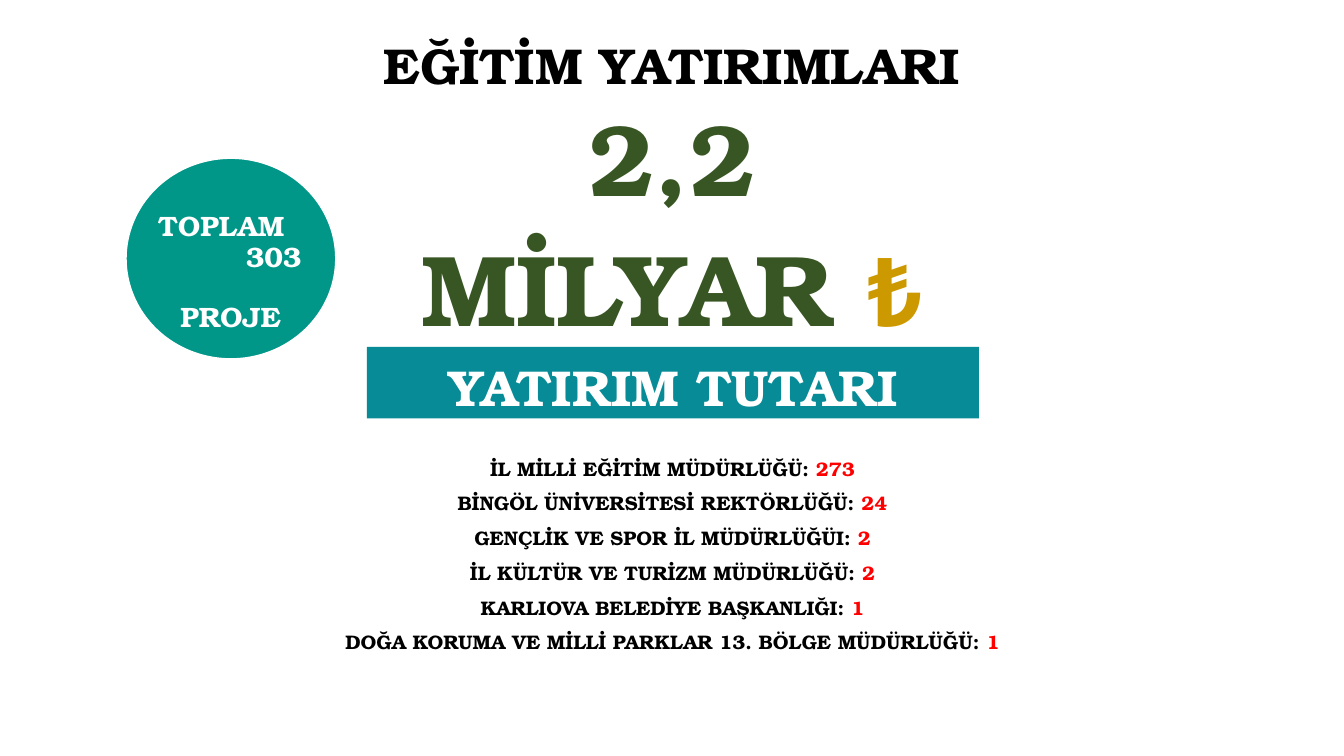
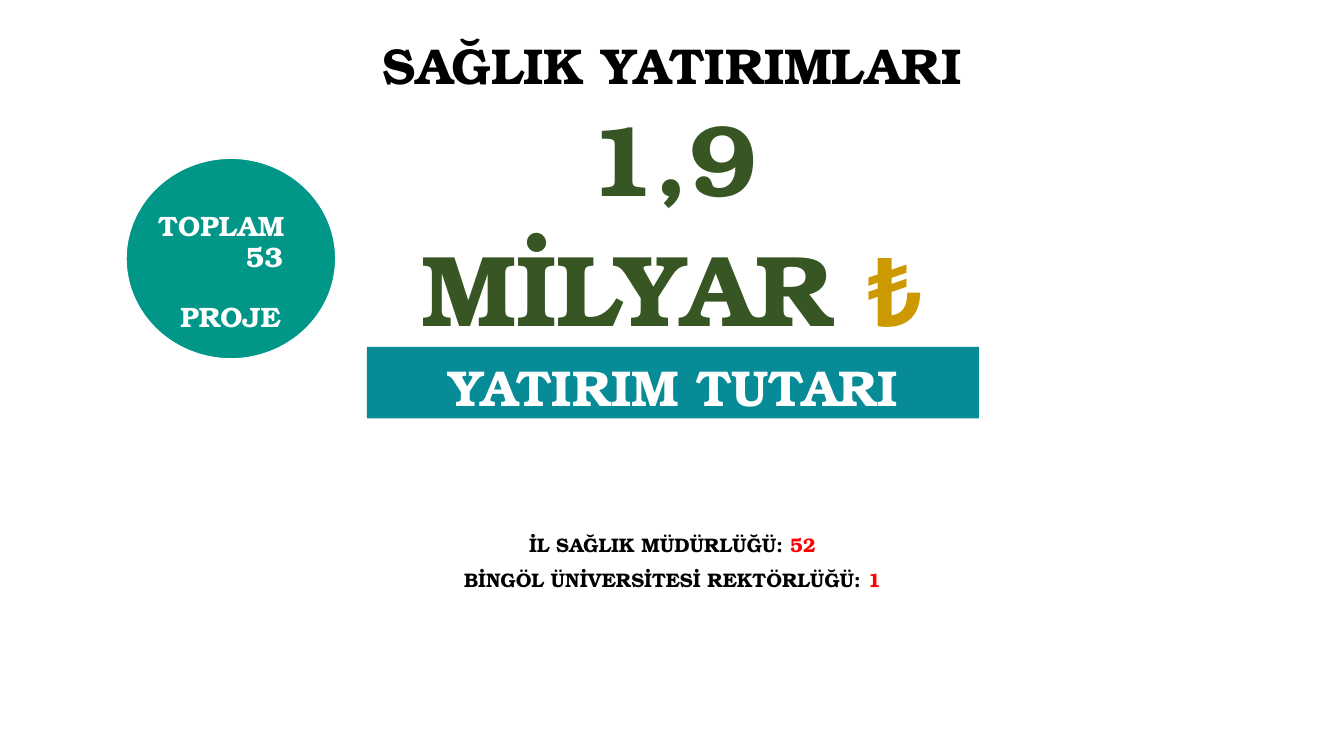
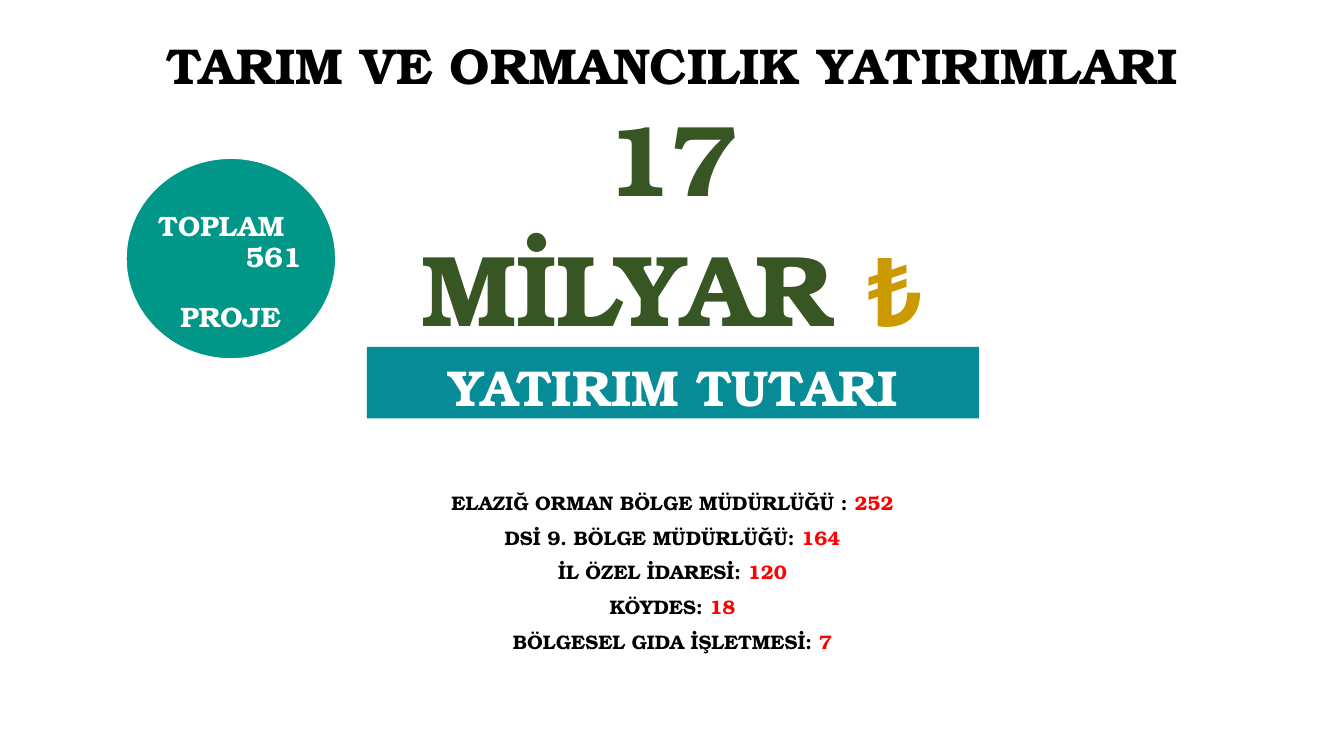
"""Builds three slides of investment totals by sector."""
from pptx import Presentation
from pptx.dml.color import RGBColor
from pptx.enum.shapes import MSO_SHAPE as SHAPE
from pptx.enum.text import MSO_ANCHOR as ANCHOR, MSO_AUTO_SIZE as AUTOSIZE, PP_ALIGN as ALIGN
from pptx.util import Pt
from lxml.etree import SubElement
from pptx.oxml.ns import qn

PX = 9144
FONT = "TeX Gyre Bonum"
COLORS = {
    "text": "000000",
    "white": "FFFFFF",
    "circle": "009688",
    "band": "068B97",
    "amount": "385623",
    "lira": "CC9900",
    "count": "FF0000",
}
SECTORS = [
    ("EĞİTİM YATIRIMLARI", "2,2", "303", 448, [
        ("İL MİLLİ EĞİTİM MÜDÜRLÜĞÜ: ", "273"),
        ("BİNGÖL ÜNİVERSİTESİ REKTÖRLÜĞÜ: ", "24"),
        ("GENÇLİK VE SPOR İL MÜDÜRLÜĞÜI: ", "2"),
        ("İL KÜLTÜR VE TURİZM MÜDÜRLÜĞÜ: ", "2"),
        ("KARLIOVA BELEDİYE BAŞKANLIĞI: ", "1"),
        ("DOĞA KORUMA VE MİLLİ PARKLAR 13. BÖLGE MÜDÜRLÜĞÜ: ", "1"),
    ]),
    ("SAĞLIK YATIRIMLARI", "1,9", "53", 524, [
        ("İL SAĞLIK MÜDÜRLÜĞÜ: ", "52"),
        ("BİNGÖL ÜNİVERSİTESİ REKTÖRLÜĞÜ: ", "1"),
    ]),
    ("TARIM VE ORMANCILIK YATIRIMLARI", "17", "561", 482, [
        ("ELAZIĞ ORMAN BÖLGE MÜDÜRLÜĞÜ : ", "252"),
        ("DSİ 9. BÖLGE MÜDÜRLÜĞÜ: ", "164"),
        ("İL ÖZEL İDARESİ: ", "120"),
        ("KÖYDES: ", "18"),
        ("BÖLGESEL GIDA İŞLETMESİ: ", "7"),
    ]),
]


def rgb(name):
    """Return a named colour."""
    return RGBColor.from_string(COLORS[name])


def px(*lengths):
    """Turn px into EMU."""
    return [n * PX for n in lengths]


def place(sp, *box):
    """Move and size a shape to left, top, width, height."""
    sp.left, sp.top, sp.width, sp.height = px(*box)


def add_run(p, text, size, color, font=FONT):
    """Append a bold run."""
    r = p.add_run()
    r.text = text
    r.font.name, r.font.size, r.font.bold = font, Pt(size), True
    r.font.color.rgb = rgb(color)


def write(sp, lines, spacing=1.07, after=0, align=ALIGN.CENTER):
    """Fill a shape with one paragraph per list of runs."""
    tf = sp.text_frame
    tf.word_wrap, tf.auto_size = True, AUTOSIZE.NONE
    tf.vertical_anchor = ANCHOR.TOP
    for i, runs in enumerate(lines):
        p = tf.paragraphs[0] if i == 0 else tf.add_paragraph()
        p.alignment, p.line_spacing = align, spacing
        p.space_before, p.space_after = Pt(0), Pt(after)
        for run in runs:
            add_run(p, *run)
    return tf.paragraphs


def add_shape(slide, kind, color, *box):
    """Add a flat filled shape without outline."""
    sp = slide.shapes.add_shape(kind, *px(*box))
    sp.shadow.inherit = False
    sp.fill.solid()
    sp.fill.fore_color.rgb = rgb(color)
    sp.line.fill.background()
    return sp


def add_title(slide, title):
    """Fill the title placeholder."""
    place(slide.shapes.title, 115, 25, 1103, 75)
    write(slide.shapes.title, [[(title, 36, "text")]])


def add_project_count(slide, count):
    """Add the circle with the number of projects."""
    circle = add_shape(slide, SHAPE.OVAL, "circle", 125, 157, 208, 199)
    circle.line.color.rgb = rgb("white")
    circle.line.width = Pt(1)
    sp = slide.shapes.add_textbox(*px(147, 206, 164, 129))
    lines = [[(text, 20, "white")] for text in ("TOPLAM", count, "PROJE")]
    paragraphs = write(sp, lines, spacing=0.9, align=ALIGN.LEFT)
    for p, indent in zip(paragraphs, (0, 87, 22)):
        p._p.get_or_add_pPr().set("marL", str(indent * PX))
    paragraphs[-1].space_before = Pt(21.5)


def add_amount(slide, amount):
    """Add the invested sum and the band below it."""
    band = add_shape(slide, SHAPE.RECTANGLE, "band", 364, 344, 607, 71)
    write(band, [[("YATIRIM TUTARI", 36, "white")]])
    sp = slide.shapes.add_textbox(*px(398, 82, 537, 252))
    write(sp, [
        [(amount, 72, "amount")],
        [("MİLYAR ", 72, "amount"), ("₺", 68, "lira", "Arial")],
    ])


def add_institutions(slide, top, institutions):
    """Fill the body placeholder with project counts by institution."""
    sp = slide.placeholders[1]
    place(sp, 305, top, 724, 35 * len(institutions) + 10)
    lines = [[(name, 14, "text"), (count, 14, "count")] for name, count in institutions]
    for p in write(sp, lines, spacing=1.0, after=8):
        pPr = p._p.get_or_add_pPr()
        pPr.set("marL", "0")
        pPr.set("indent", "0")
        SubElement(pPr, qn("a:buNone"))


def main():
    """Build and save the presentation."""
    prs = Presentation()
    prs.slide_width, prs.slide_height = px(1333, 750)
    for title, amount, count, top, institutions in SECTORS:
        slide = prs.slides.add_slide(prs.slide_layouts[1])
        add_title(slide, title)
        add_project_count(slide, count)
        add_amount(slide, amount)
        add_institutions(slide, top, institutions)
    prs.save("out.pptx")


if __name__ == "__main__":
    main()
